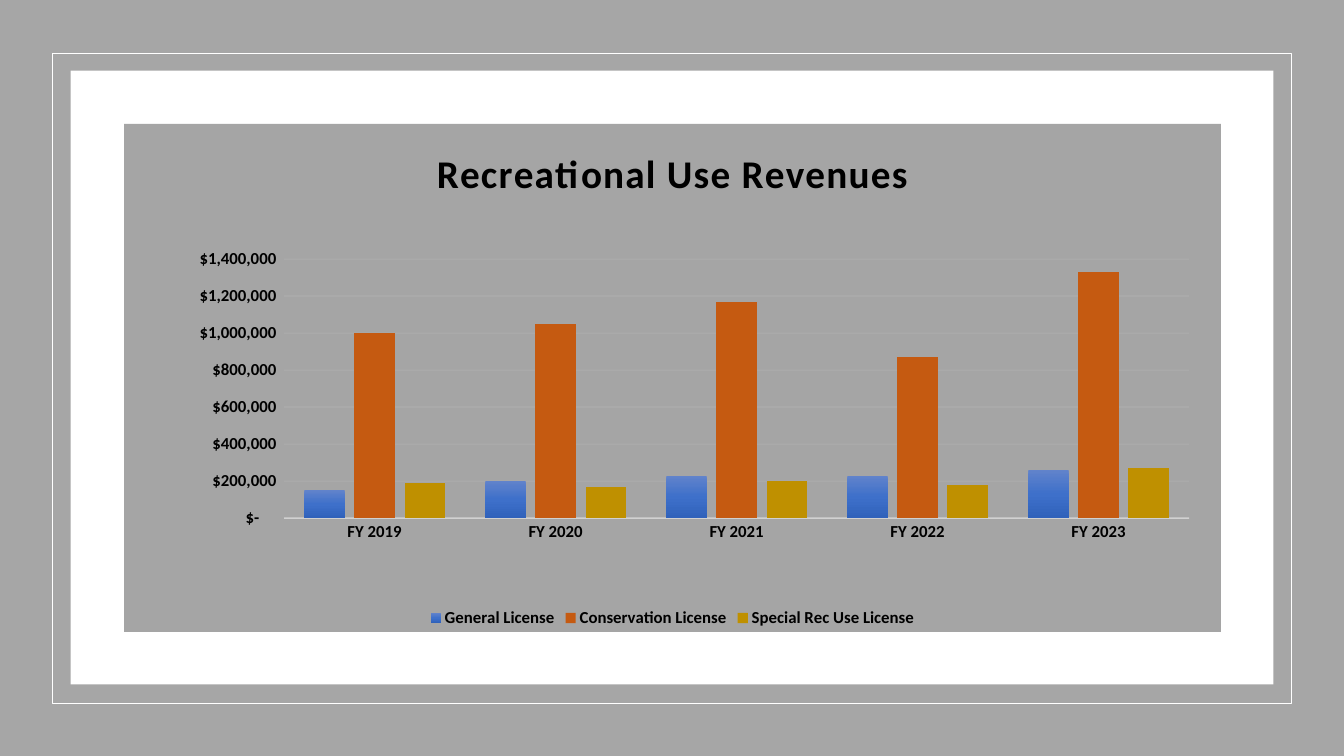
from pptx import Presentation
from pptx.chart.data import CategoryChartData
from pptx.dml.color import RGBColor
from pptx.enum.chart import XL_CHART_TYPE as ChartType, XL_LEGEND_POSITION as LegendPos, XL_TICK_MARK as Tick
from pptx.enum.shapes import MSO_SHAPE as Shape
from pptx.oxml import parse_xml
from pptx.oxml.ns import nsdecls, qn
from pptx.util import Inches, Pt

TITLE = "Recreational Use Revenues"
YEARS = ["FY 2019", "FY 2020", "FY 2021", "FY 2022", "FY 2023"]
REVENUES = {
    "General License": [150000, 200000, 230000, 230000, 260000],
    "Conservation License": [1000000, 1050000, 1170000, 870000, 1330000],
    "Special Rec Use License": [190000, 170000, 200000, 180000, 270000],
}
DOLLARS = r'_("$"* #,##0_);_("$"* \(#,##0\);_("$"* "-"??_);_(@_)'
SLIDE = (13.33, 7.5)
FRAME = (0.52, 0.53, 12.29, 6.45)
PANEL = (0.7, 0.7, 11.93, 6.09)
CHART = (1.23, 1.23, 10.88, 5.04)
PLOT = {"x": 0.146, "y": 0.266, "w": 0.825, "h": 0.51}
THEME = {
    "font": "Calibri", "text": "000000", "title_size": 28, "label_size": 12,
    "backdrop": "A6A6A6", "white": "FFFFFF", "chart": "A5A5A5", "line": "F2F2F2",
    "series": [["6183CB", "3E70CA", "3062BB"], ["C55A11"], ["BF9000"]],
}


def color(name):
    return RGBColor.from_string(THEME[name])


def add_rect(slide, box, fill=None, line=None):
    s = slide.shapes.add_shape(Shape.RECTANGLE, *map(Inches, box))
    s.shadow.inherit = False
    if fill:
        s.fill.solid()
        s.fill.fore_color.rgb = color(fill)
    else:
        s.fill.background()
    if line:
        s.line.color.rgb = color(line)
        s.line.width = Pt(1)
    else:
        s.line.fill.background()


def style_font(font, size):
    font.name = THEME["font"]
    font.size = Pt(THEME[size])
    font.bold = True
    font.color.rgb = color("text")


def style_line(line, width, opacity):
    line.color.rgb = color("line")
    line.width = Pt(width)
    rgb = line.fill._xPr.find(".//" + qn("a:srgbClr"))
    rgb.append(parse_xml(f'<a:alpha {nsdecls("a")} val="{opacity * 1000}"/>'))


def fill_series(series, colors):
    """Fill with one colour, or with an even top-to-bottom gradient of several."""
    fill = series.format.fill
    if len(colors) == 1:
        fill.solid()
        fill.fore_color.rgb = RGBColor.from_string(colors[0])
        return
    fill.gradient()
    old = series._element.find(qn("c:spPr")).find(qn("a:gradFill"))
    step = 100000 // (len(colors) - 1)
    stops = "".join(f'<a:gs pos="{i * step}"><a:srgbClr val="{c}"/></a:gs>' for i, c in enumerate(colors))
    old.getparent().replace(old, parse_xml(
        f'<a:gradFill {nsdecls("a")} rotWithShape="1"><a:gsLst>{stops}</a:gsLst>'
        '<a:lin ang="5400000" scaled="0"/></a:gradFill>'))


def place_plot(chart):
    area = chart._chartSpace.chart.plotArea
    for old in area.findall(qn("c:layout")):
        area.remove(old)
    modes = "".join(f'<c:{k}Mode val="edge"/>' for k in "xy")
    sizes = "".join(f'<c:{k} val="{v}"/>' for k, v in PLOT.items())
    area.insert(0, parse_xml(
        f'<c:layout {nsdecls("c")}><c:manualLayout><c:layoutTarget val="inner"/>'
        f'{modes}{sizes}</c:manualLayout></c:layout>'))


def fill_chart(chart):
    chart._chartSpace.chart.addnext(parse_xml(
        f'<c:spPr {nsdecls("c", "a")}><a:solidFill><a:srgbClr val="{THEME["chart"]}"/></a:solidFill>'
        '<a:ln><a:noFill/></a:ln></c:spPr>'))


def add_revenue_chart(slide):
    data = CategoryChartData(number_format=DOLLARS)
    data.categories = YEARS
    for name, values in REVENUES.items():
        data.add_series(name, values)
    chart = slide.shapes.add_chart(ChartType.COLUMN_CLUSTERED, *map(Inches, CHART), data).chart
    style_font(chart.font, "label_size")
    fill_chart(chart)
    place_plot(chart)

    chart.has_title = True
    tf = chart.chart_title.text_frame
    tf.text = TITLE
    r = tf.paragraphs[0].runs[0]
    style_font(r.font, "title_size")
    r.font._element.set("spc", "100")
    chart.chart_title.include_in_layout = False

    chart.has_legend = True
    chart.legend.position = LegendPos.BOTTOM
    chart.legend.include_in_layout = False
    style_font(chart.legend.font, "label_size")

    for axis in (chart.category_axis, chart.value_axis):
        axis.major_tick_mark = axis.minor_tick_mark = Tick.NONE
        style_font(axis.tick_labels.font, "label_size")
    style_line(chart.category_axis.format.line, 1, 54)
    values = chart.value_axis
    values.minimum_scale, values.maximum_scale, values.major_unit = 0, 1400000, 200000
    values.format.line.fill.background()
    style_line(values.major_gridlines.format.line, 0.75, 10)
    values.tick_labels.number_format = DOLLARS
    values.tick_labels.number_format_is_linked = False

    plot = chart.plots[0]
    plot.gap_width, plot.overlap, plot.vary_by_categories = 100, -24, False
    for series, colors in zip(plot.series, THEME["series"]):
        series.invert_if_negative = False
        fill_series(series, colors)


def main():
    prs = Presentation()
    prs.slide_width, prs.slide_height = map(Inches, SLIDE)
    slide = prs.slides.add_slide(prs.slide_layouts[6])
    add_rect(slide, (0, 0, *SLIDE), fill="backdrop")
    add_rect(slide, FRAME, line="white")
    add_rect(slide, PANEL, fill="white")
    add_revenue_chart(slide)
    prs.save("out.pptx")


if __name__ == "__main__":
    main()
